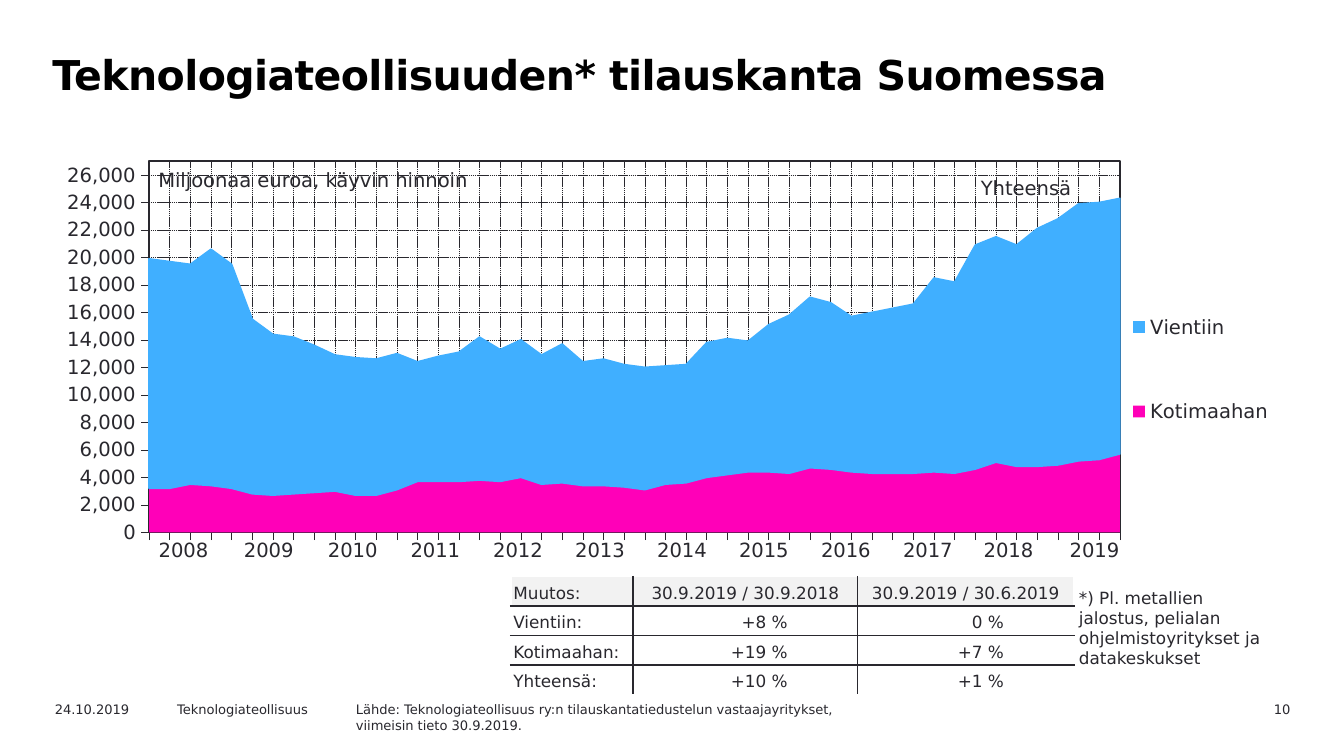
from lxml import etree
from pptx import Presentation
from pptx.chart.data import CategoryChartData as ChartData
from pptx.dml.color import RGBColor
from pptx.enum.chart import XL_CHART_TYPE as Kind, XL_LEGEND_POSITION as LegPos
from pptx.enum.chart import XL_TICK_LABEL_POSITION as TickPos, XL_TICK_MARK as Tick
from pptx.enum.dml import MSO_LINE as Dash
from pptx.enum.text import MSO_ANCHOR as Anchor, PP_ALIGN as Align
from pptx.oxml import parse_xml
from pptx.oxml.ns import nsdecls, qn
from pptx.util import Inches, Pt

FONT = "DejaVu Sans"
INK = RGBColor(0x29, 0x28, 0x2E)
BLACK = RGBColor(0, 0, 0)
WHITE = RGBColor(0xFF, 0xFF, 0xFF)
GRAY = RGBColor(0xF2, 0xF2, 0xF2)
PINK = RGBColor(0xFF, 0x00, 0xB8)
BLUE = RGBColor(0x40, 0xAF, 0xFF)
NO_STYLE = "{2D5ABB26-0587-4C30-8999-92F81FD0307C}"

# Order books by quarter, million euros; the last two quarters have no label
LABELS = [str(n) for n in range(1, 47)]
HOME = [3200, 3200, 3500, 3400, 3200, 2800, 2700, 2800, 2900, 3000, 2700, 2700,
        3100, 3700, 3700, 3700, 3800, 3700, 4000, 3500, 3600, 3400, 3400, 3300,
        3100, 3500, 3600, 4000, 4200, 4400, 4400, 4300, 4700, 4600, 4400, 4300,
        4300, 4300, 4400, 4300, 4600, 5100, 4800, 4800, 4900, 5200, 5300, 5700]
EXPORT = [16700, 16500, 16000, 17200, 16300, 12700, 11700, 11400, 10700, 9900, 10000, 9900,
          9900, 8700, 9100, 9400, 10400, 9600, 10000, 9400, 10100, 9000, 9200, 8900,
          8900, 8600, 8600, 9800, 9900, 9500, 10700, 11500, 12400, 12100, 11300, 11700,
          12000, 12300, 14100, 13900, 16300, 16400, 16100, 17300, 17900, 18700, 18700, 18600]

YEAR_COLS = [0.63, 0.64, 0.61, 0.62] + [0.61] * 6 + [0.59, 0.69]
CHANGES = [
    ["Muutos:", "30.9.2019 / 30.9.2018", "30.9.2019 / 30.6.2019"],
    ["Vientiin:", "+8 %", "0 %"],
    ["Kotimaahan:", "+19 %", "+7 %"],
    ["Yhteensä:", "+10 %", "+1 %"],
]


def set_font(font, size, color=INK, bold=False):
    font.name, font.size, font.bold = FONT, Pt(size), bold
    font.color.rgb = color


def add_text(slide, box, text, size, color=INK, bold=False, align=Align.LEFT, wrap=True):
    shape = slide.shapes.add_textbox(*map(Inches, box))
    frame = shape.text_frame
    frame.word_wrap = wrap
    frame.text = text
    for para in frame.paragraphs:
        para.alignment = align
        for run in para.runs:
            set_font(run.font, size, color, bold)
    return frame


def add_title(slide, text):
    frame = add_text(slide, (0.28, 0.31, 8.74, 0.71), text, 22, BLACK, True)
    frame.margin_left = Inches(0.11)
    para = frame.paragraphs[0]
    para.line_spacing = Pt(27)
    para.runs[0].font._element.set("spc", "-30")


def set_line(line, width, dash=None):
    line.color.rgb = INK
    line.width = Pt(width)
    if dash:
        line.dash_style = dash


def place(part, index, x, y, w, h, inner=False):
    for old in part.findall(qn("c:layout")):
        part.remove(old)
    target = '<c:layoutTarget val="inner"/>' if inner else ""
    part.insert(index, parse_xml(
        f'<c:layout {nsdecls("c")}><c:manualLayout>{target}'
        '<c:xMode val="edge"/><c:yMode val="edge"/>'
        f'<c:x val="{x}"/><c:y val="{y}"/><c:w val="{w}"/><c:h val="{h}"/>'
        '</c:manualLayout></c:layout>'))


def add_area(slide):
    data = ChartData(number_format="#,##0")
    data.categories = LABELS
    data.add_series("Kotimaahan ", HOME)
    data.add_series("Vientiin ", EXPORT)
    box = map(Inches, (0.42, 1.11, 9.18, 3.12))
    chart = slide.shapes.add_chart(Kind.AREA_STACKED, *box, data).chart
    chart.has_title = False
    set_font(chart.font, 10.5)
    chart.plots[0].vary_by_categories = False
    for series, color in zip(chart.plots[0].series, (PINK, BLUE)):
        series.format.fill.solid()
        series.format.fill.fore_color.rgb = color
    line = series.format.line
    line.color.rgb, line.width = BLUE, Pt(0.88)

    # Axes and grid
    cat, val = chart.category_axis, chart.value_axis
    for axis in (cat, val):
        axis.major_tick_mark, axis.minor_tick_mark = Tick.OUTSIDE, Tick.NONE
        axis.has_major_gridlines = True
        set_line(axis.format.line, 0.22)
        set_line(axis.major_gridlines.format.line, 0.25, Dash.SQUARE_DOT)
    cat.tick_label_position = TickPos.NONE
    val.minimum_scale, val.maximum_scale, val.major_unit = 0, 27000, 2000
    val.tick_labels.number_format = "#,##0"
    val.tick_labels.number_format_is_linked = False
    set_font(val.tick_labels.font, 10.5)
    val._element.find(qn("c:crossBetween")).set("val", "midCat")

    # Plot frame
    plot = chart._chartSpace.chart.plotArea
    place(plot, 0, 0.075, 0.029, 0.787, 0.885, inner=True)
    plot.append(parse_xml(
        f'<c:spPr {nsdecls("c", "a")}><a:noFill/><a:ln w="12700"><a:solidFill>'
        f'<a:srgbClr val="{INK}"/></a:solidFill></a:ln></c:spPr>'))

    # Legend
    chart.has_legend = True
    legend = chart.legend
    legend.position = LegPos.RIGHT
    legend.include_in_layout = False
    set_font(legend.font, 10.5)
    place(legend._element, 1, 0.87, 0.25, 0.12, 0.55)


def add_grid(slide, x, y, cols, row, texts, size):
    shape = slide.shapes.add_table(len(texts), len(cols), Inches(x), Inches(y),
                                   Inches(sum(cols)), Inches(row * len(texts)))
    table = shape.table
    table.first_row = table.horz_banding = False
    table._tbl.tblPr.find(qn("a:tableStyleId")).text = NO_STYLE
    for col, width in zip(table.columns, cols):
        col.width = Inches(width)
    for line, words in zip(table.rows, texts):
        line.height = Inches(row)
        for cell, word in zip(line.cells, words):
            cell.text = word
            para = cell.text_frame.paragraphs[0]
            para.alignment = Align.CENTER
            set_font(para.runs[0].font, size)
            cell.fill.background()
    return table


def add_edges(cell, **edges):
    props = cell._tc.get_or_add_tcPr()
    for index, side in enumerate("LRTB"):
        line = etree.Element(qn(f"a:ln{side}"), w="12700")
        fill = etree.SubElement(line, qn("a:solidFill"))
        etree.SubElement(fill, qn("a:srgbClr"), val=str(edges[side]))
        props.insert(index, line)


def add_changes(slide):
    table = add_grid(slide, 3.8, 4.29, [0.91, 1.67, 1.61], 0.22, CHANGES, 9)
    bottom, right = len(CHANGES) - 1, len(CHANGES[0]) - 1
    for r in range(bottom + 1):
        for c in range(right + 1):
            cell = table.cell(r, c)
            figure = r > 0 and c > 0
            cell.vertical_anchor = Anchor.BOTTOM
            cell.margin_left = cell.margin_top = cell.margin_bottom = Inches(0.02)
            cell.margin_right = Inches(0.52 if figure else 0.02)
            para = cell.text_frame.paragraphs[0]
            if c == 0:
                para.alignment = Align.LEFT
            elif figure:
                para.alignment = Align.RIGHT
            if r in (0, bottom):
                cell.fill.solid()
                cell.fill.fore_color.rgb = WHITE if r else GRAY
            add_edges(cell, L=INK if c else WHITE, R=INK if c < right else WHITE,
                      T=INK if r else WHITE, B=INK if r < bottom else WHITE)


def main():
    deck = Presentation()
    deck.slide_width = Inches(10)
    deck.slide_height = deck.slide_width * 9 // 16
    slide = deck.slides.add_slide(deck.slide_layouts[6])

    # Title and footer
    add_title(slide, "Teknologiateollisuuden* tilauskanta Suomessa")
    add_text(slide, (8.76, 5.17, 0.94, 0.18), "10", 7, align=Align.RIGHT)
    add_text(slide, (0.31, 5.17, 1, 0.18), "24.10.2019", 7)
    add_text(slide, (1.22, 5.17, 1.42, 0.18), "Teknologiateollisuus", 7)
    add_text(slide, (2.55, 5.17, 5, 0.26),
             "Lähde: Teknologiateollisuus ry:n tilauskantatiedustelun vastaajayritykset,\n"
             "viimeisin tieto 30.9.2019.", 7)

    # Chart with its year row and labels
    add_area(slide)
    years = [str(year) for year in range(2008, 2020)]
    add_grid(slide, 1.05, 3.96, YEAR_COLS, 0.25, [years], 10.5)
    add_text(slide, (1.08, 1.2, 2.6, 0.27), "Miljoonaa euroa, käyvin hinnoin", 10.5, wrap=False)
    add_text(slide, (7.2, 1.26, 1.06, 0.27), "Yhteensä", 10.5)

    # Changes and footnote
    add_changes(slide)
    add_text(slide, (7.93, 4.32, 1.66, 0.71),
             "*) Pl. metallien jalostus, pelialan ohjelmistoyritykset ja datakeskukset", 9)
    deck.save("out.pptx")


if __name__ == "__main__":
    main()
